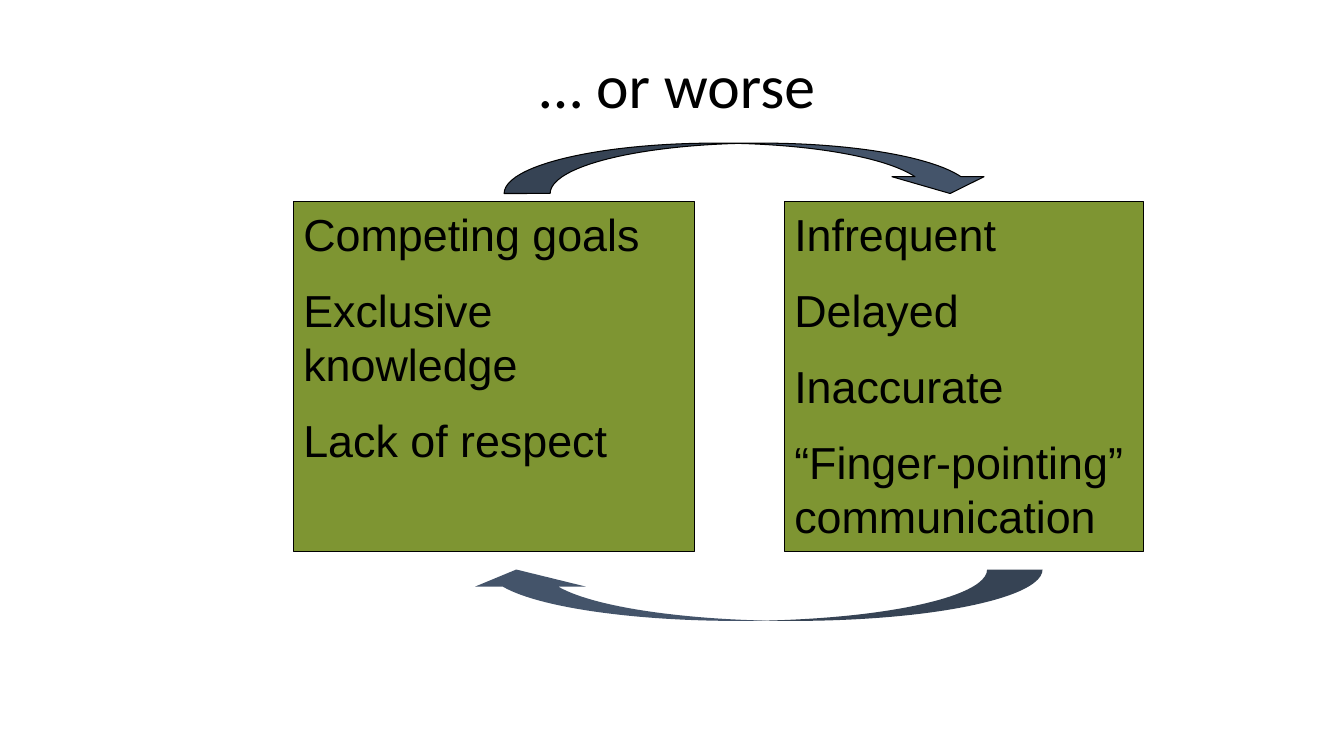
"""Build the "… or worse" slide: two boxes joined in a vicious circle."""
from pptx import Presentation
from pptx.dml.color import RGBColor
from pptx.enum import shapes, text
from pptx.util import Inches, Pt

BLACK, GREEN, SLATE = "000000", "7E9532", "44546A"


def paint(color_format, color):
    color_format.rgb = RGBColor.from_string(color)


def add_filled_shape(kind, box, color, outlined=True):
    shape = slide.shapes.add_shape(kind, *map(Inches, box))
    shape.shadow.inherit = False
    shape.fill.solid()
    paint(shape.fill.fore_color, color)
    if outlined:
        shape.line.width = Pt(0.75)
        paint(shape.line.color, BLACK)
    else:
        shape.line.fill.background()
    return shape


presentation = Presentation()
presentation.slide_width = Inches(13.33)
presentation.slide_height = Inches(7.5)
slide = presentation.slides.add_slide(presentation.slide_layouts[5])

title = slide.shapes.title
title_place = {"left": 0.44, "top": 0.33, "width": 12.56, "height": 0.92}
for name, value in title_place.items():
    setattr(title, name, Inches(value))
title.text_frame.text = "… or worse"
title.text_frame.vertical_anchor = text.MSO_ANCHOR.BOTTOM
title.text_frame.auto_size = text.MSO_AUTO_SIZE.NONE
heading = title.text_frame.paragraphs[0]
heading.alignment = text.PP_ALIGN.CENTER
for name, value in {"name": "Calibri", "size": Pt(44)}.items():
    setattr(heading.font, name, value)
paint(heading.font.color, BLACK)

boxes = [
    (2.91, 3.98, ["Competing goals", "Exclusive knowledge", "Lack of respect"]),
    (7.78, 3.56, ["Infrequent", "Delayed", "Inaccurate", "“Finger-pointing” communication"]),
]
frame_format = {
    "word_wrap": True,
    "auto_size": text.MSO_AUTO_SIZE.SHAPE_TO_FIT_TEXT,
    "vertical_anchor": text.MSO_ANCHOR.TOP,
}
for left, width, lines in boxes:
    box = add_filled_shape(shapes.MSO_SHAPE.RECTANGLE, (left, 2, width, 3.47), GREEN)
    frame = box.text_frame
    for name, value in frame_format.items():
        setattr(frame, name, value)
    frame.text = "\n".join(lines)
    for index, paragraph in enumerate(frame.paragraphs):
        paragraph.alignment = text.PP_ALIGN.LEFT
        paragraph.space_before = Pt(16 if index else 0)
        for name, value in {"name": "Arial", "size": Pt(32)}.items():
            setattr(paragraph.font, name, value)
        paint(paragraph.font.color, BLACK)

arrows = [
    (shapes.MSO_SHAPE.CURVED_DOWN_ARROW, (5, 1.42, 4.88, 0.5), 0, 0.913, True),
    (shapes.MSO_SHAPE.CURVED_LEFT_ARROW, (7.2, 3.02, 0.51, 5.77), 90, 1.079, False),
]
for kind, place, rotation, thickness, outlined in arrows:
    arrow = add_filled_shape(kind, place, SLATE, outlined)
    arrow.rotation = rotation
    for index, value in enumerate((thickness, 2 * thickness, 0.333)):
        arrow.adjustments[index] = value

presentation.save("out.pptx")
